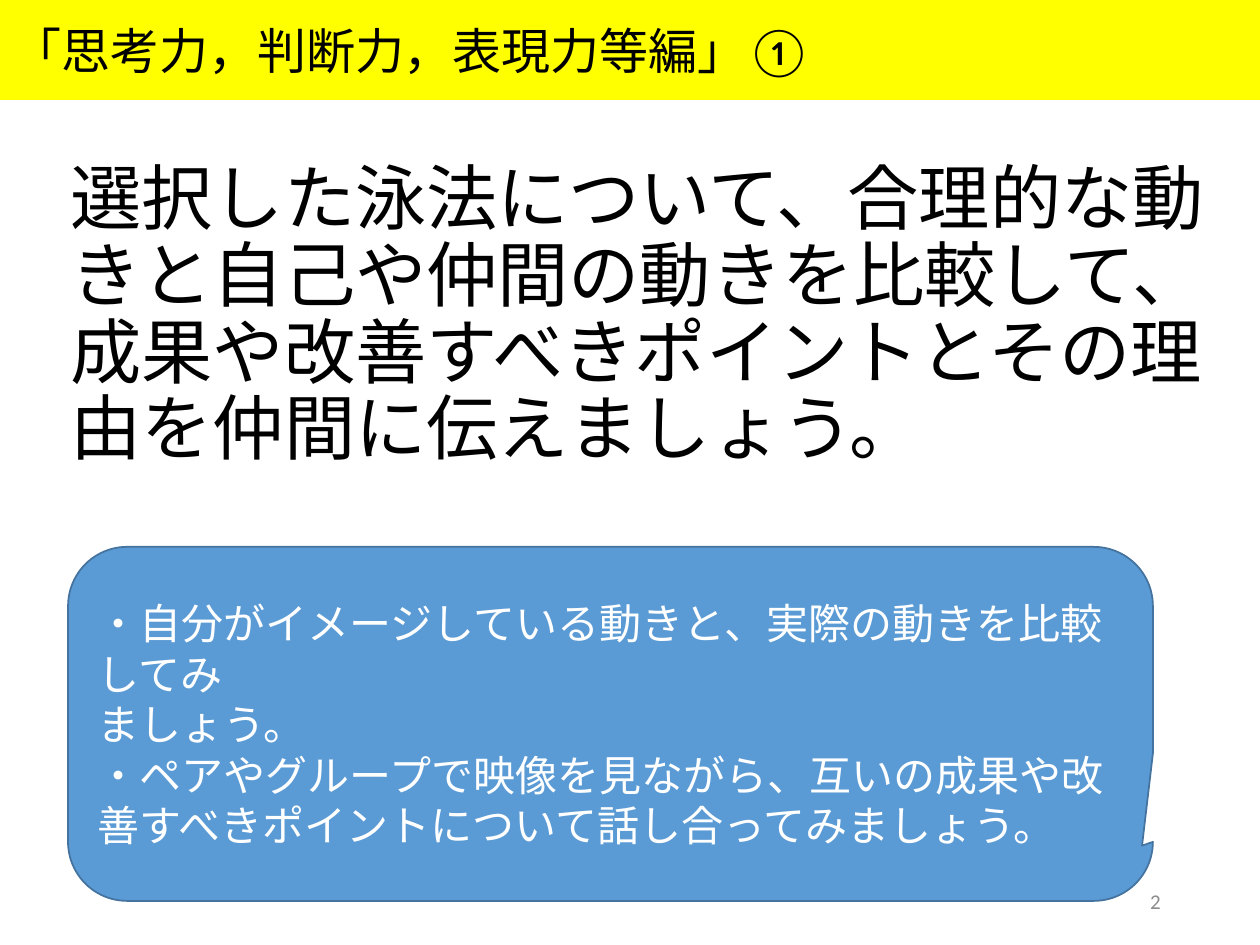
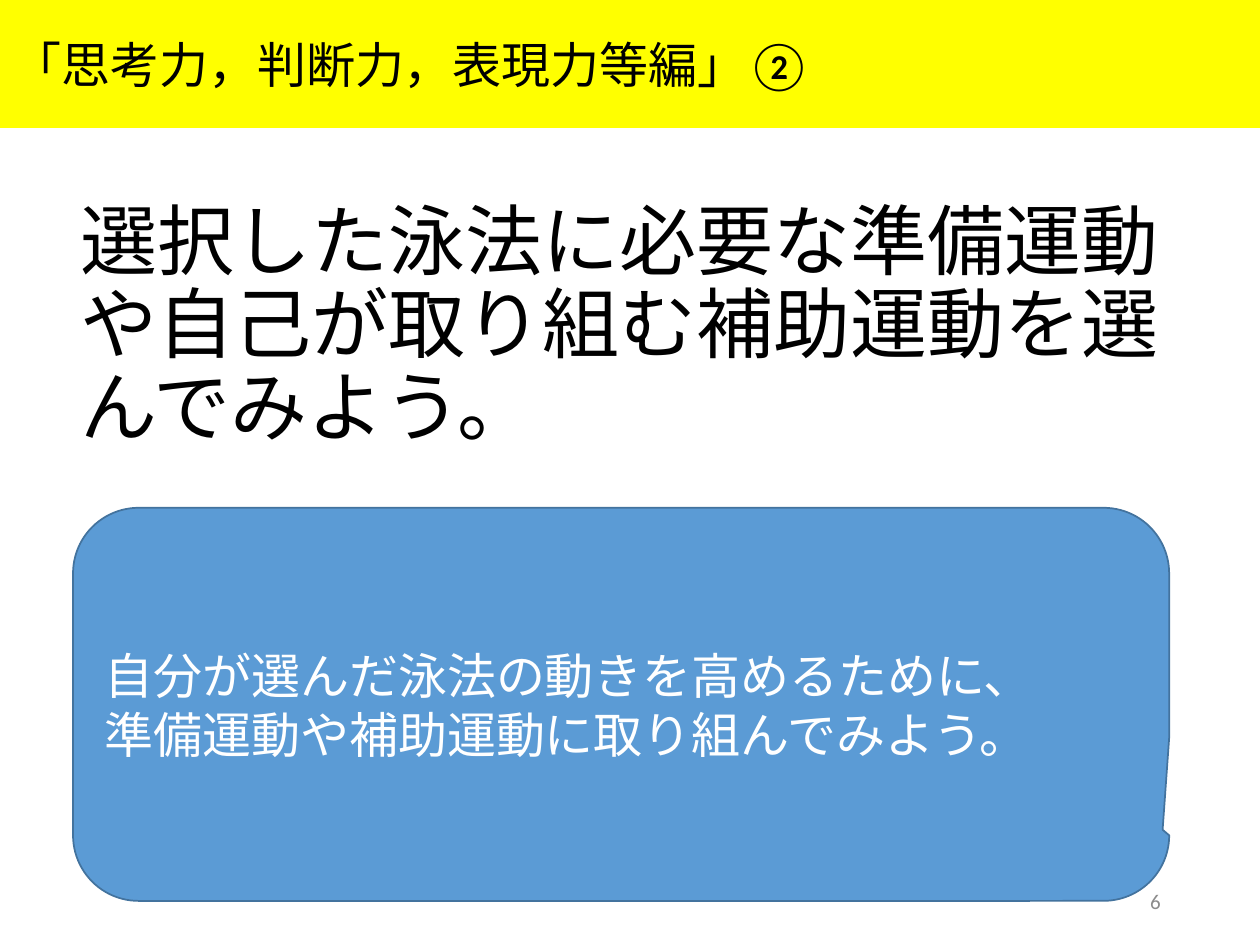
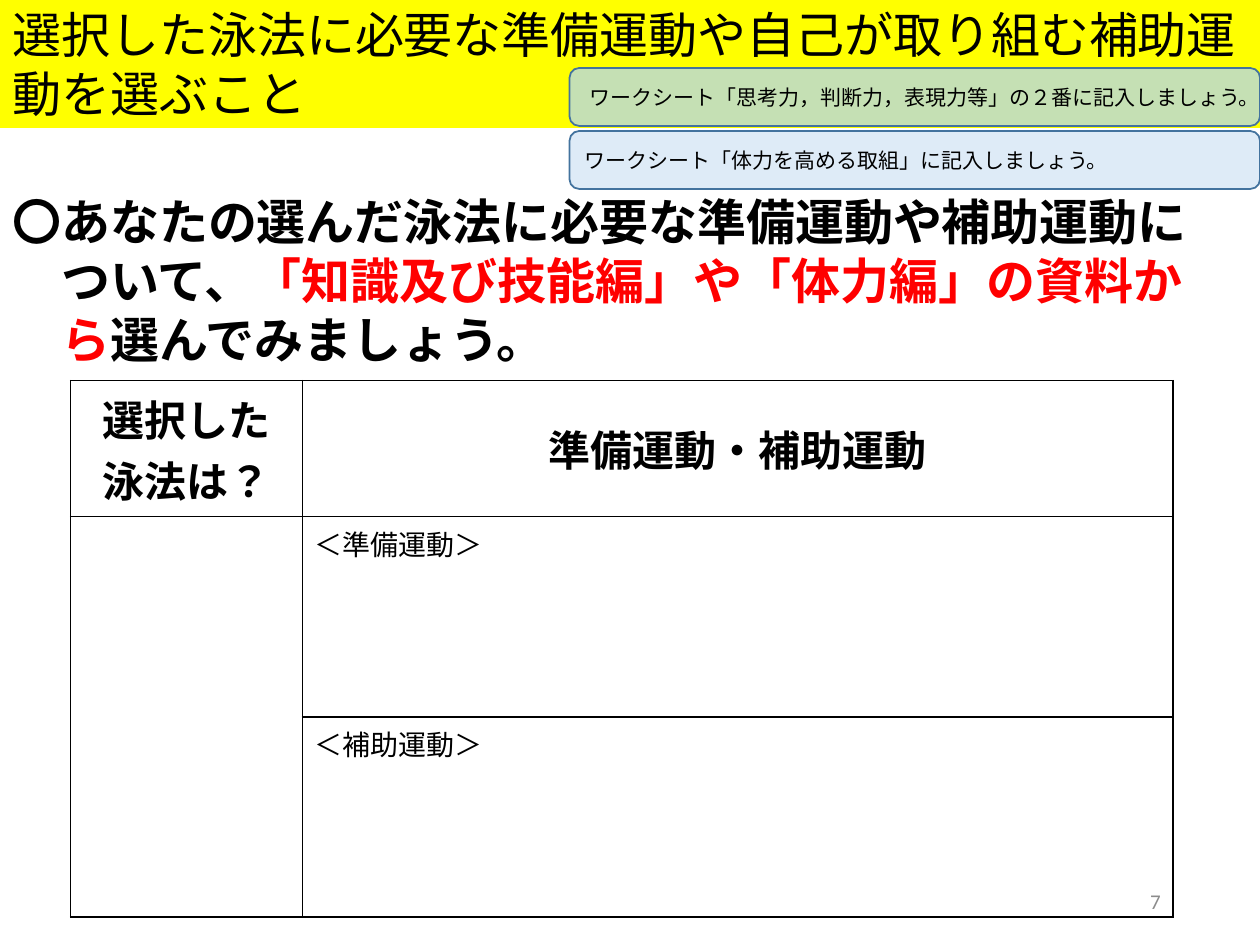
from lxml import etree
from pptx import Presentation
from pptx.dml.color import RGBColor
from pptx.enum.lang import MSO_LANGUAGE_ID as Language
from pptx.enum.shapes import MSO_SHAPE as Shape
from pptx.enum.text import MSO_ANCHOR as Anchor, MSO_AUTO_SIZE as AutoSize, PP_ALIGN as Align
from pptx.oxml.ns import qn
from pptx.util import Inches, Pt

YELLOW = RGBColor(0xFF, 0xFF, 0x00)
BLUE = RGBColor(0x5B, 0x9B, 0xD5)
OUTLINE = RGBColor(0x43, 0x73, 0x9E)
PALE_BLUE = RGBColor(0xDE, 0xEB, 0xF7)
PALE_GREEN = RGBColor(0xC5, 0xE0, 0xB4)
BLACK = RGBColor(0x00, 0x00, 0x00)
WHITE = RGBColor(0xFF, 0xFF, 0xFF)
RED = RGBColor(0xFF, 0x00, 0x00)
GRAY = RGBColor(0x8C, 0x8C, 0x8C)

LATIN_FONT = "Calibri"
JAPANESE_FONT = "Noto Sans CJK JP"

TITLE_SLIDE, TITLE_ONLY = 0, 5


def write(frame, paragraphs, size, color=BLACK, bold=False, align=Align.LEFT,
          anchor=Anchor.MIDDLE, font=LATIN_FONT, east_asian=LATIN_FONT):
    """Fill a text frame; each paragraph is a list of (text, color or None) runs."""
    frame.word_wrap = True
    frame.vertical_anchor = anchor
    for index, runs in enumerate(paragraphs):
        paragraph = frame.add_paragraph() if index else frame.paragraphs[0]
        paragraph.alignment = align
        paragraph.space_before = Pt(0)
        for text, run_color in runs:
            run = paragraph.add_run()
            run.text = text
            run.font.name = font
            run.font.size = Pt(size)
            run.font.bold = bold
            run.font.language_id = Language.JAPANESE
            run.font.color.rgb = run_color or color
            latin = run.font._element.find(qn("a:latin"))
            latin.addnext(latin.makeelement(qn("a:ea"), {"typeface": east_asian}))


def paint(shape, fill, line):
    shape.fill.solid()
    shape.fill.fore_color.rgb = fill
    shape.line.color.rgb = line
    shape.line.width = Pt(1)
    shape.shadow.inherit = False


presentation = Presentation()
presentation.slide_width = Inches(10)
presentation.slide_height = Inches(7.5)

# Shared parts: title band and slide number
pages = [
    (TITLE_SLIDE, "「思考力，判断力，表現力等編」①", 0.79, "2"),
    (TITLE_SLIDE, "「思考力，判断力，表現力等編」②", 1.01, "6"),
    (TITLE_ONLY, "選択した泳法に必要な準備運動や自己が取り組む補助運動を選ぶこと", 1.01, "7"),
]
slides = []
for layout, heading, band_height, number in pages:
    slide = presentation.slides.add_slide(presentation.slide_layouts[layout])
    slides.append(slide)
    title = slide.shapes.title
    title.left, title.top = 0, 0
    title.width, title.height = presentation.slide_width, Inches(band_height)
    paint(title, YELLOW, YELLOW)
    title.text_frame.auto_size = AutoSize.NONE
    write(title.text_frame, [[(heading, None)]], 28)
    number_box = slide.shapes.add_textbox(Inches(7.06), Inches(6.95), Inches(2.25), Inches(0.4))
    write(number_box.text_frame, [[(number, None)]], 12, GRAY, align=Align.RIGHT)

# Task statement and hint callout on the first two slides
tasks = [
    ("選択した泳法について、合理的な動きと自己や仲間の動きを比較して、"
     "成果や改善すべきポイントとその理由を仲間に伝えましょう。",
     40.7, (0.46, 1.24, 9.23, 2.99),
     ["・自分がイメージしている動きと、実際の動きを比較してみ",
      "ましょう。",
      "・ペアやグループで映像を見ながら、互いの成果や改善すべきポイントについて話し合ってみましょう。"],
     24, (0.54, 4.34, 8.61, 2.81), (0.49, 0.344, 0.167)),
    ("選択した泳法に必要な準備運動や自己が取り組む補助運動を選んでみよう。",
     44, (0.54, 1.56, 8.77, 2.99),
     ["自分が選んだ泳法の動きを高めるために、",
      "準備運動や補助運動に取り組んでみよう。"],
     28, (0.58, 4.03, 8.7, 3.12), (0.494, 0.319, 0.167)),
]
for slide, (task, task_size, task_box, hints, hint_size, hint_box, tail) in zip(slides, tasks):
    statement = slide.placeholders[1]
    statement.left, statement.top, statement.width, statement.height = map(Inches, task_box)
    statement.text_frame.auto_size = AutoSize.NONE
    write(statement.text_frame, [[(task, None)]], task_size, anchor=Anchor.TOP)
    statement.text_frame.paragraphs[0].line_spacing = 0.9

    callout = slide.shapes.add_shape(Shape.ROUNDED_RECTANGULAR_CALLOUT, *map(Inches, hint_box))
    for index, value in enumerate(tail):
        callout.adjustments[index] = value
    paint(callout, BLUE, OUTLINE)
    write(callout.text_frame, [[(hint, None)] for hint in hints], hint_size, WHITE,
          font=JAPANESE_FONT)

# Worksheet slide: table, instruction and two notes
worksheet = slides[2]
column_widths = (1.84, 6.91)
row_heights = (1.08, 1.59, 1.59)
table = worksheet.shapes.add_table(
    len(row_heights), len(column_widths), Inches(0.56), Inches(3.02),
    Inches(sum(column_widths)), Inches(sum(row_heights))).table
table.first_row = table.horz_banding = False
for column, width in zip(table.columns, column_widths):
    column.width = Inches(width)
for row, height in zip(table.rows, row_heights):
    row.height = Inches(height)
for cell in table.iter_cells():
    properties = cell._tc.get_or_add_tcPr()
    for side in ("lnL", "lnR", "lnT", "lnB"):
        border = etree.SubElement(properties, qn(f"a:{side}"), w=str(Pt(1)))
        solid = etree.SubElement(border, qn("a:solidFill"))
        etree.SubElement(solid, qn("a:srgbClr"), val=str(BLACK))
    cell.fill.background()
table.cell(1, 0).merge(table.cell(2, 0))
for column, heading in enumerate(("選択した泳法は？", "準備運動・補助運動")):
    cell = table.cell(0, column)
    write(cell.text_frame, [[(heading, None)]], 24, bold=True, align=Align.CENTER,
          east_asian=JAPANESE_FONT)
    cell.vertical_anchor = Anchor.MIDDLE
for row, label in enumerate(("＜準備運動＞", "＜補助運動＞"), start=1):
    cell = table.cell(row, 1)
    write(cell.text_frame, [[(label, None)]], 16, anchor=Anchor.TOP, east_asian=JAPANESE_FONT)
    cell.vertical_anchor = Anchor.TOP

instruction = worksheet.shapes.add_textbox(0, Inches(1.37), presentation.slide_width, Inches(1.7))
write(instruction.text_frame, [
    [("〇あなたの選んだ泳法に必要な準備運動や補助運動に", None)],
    [("　ついて、", None), ("「知識及び技能編」や「体力編」の資料か", RED)],
    [("　ら", RED), ("選んでみましょう。", None)],
], 28, bold=True)

notes = [
    ("ワークシート「体力を高める取組」に記入しましょう。", 1.04, PALE_BLUE, Align.LEFT),
    ("ワークシート「思考力，判断力，表現力等」の２番に記入しましょう。", 0.54, PALE_GREEN, Align.CENTER),
]
for text, top, fill, align in notes:
    note = worksheet.shapes.add_shape(
        Shape.ROUNDED_RECTANGLE, Inches(4.52), Inches(top), Inches(5.48), Inches(0.46))
    paint(note, fill, OUTLINE)
    write(note.text_frame, [[(text, None)]], 12, align=align)

presentation.save("out.pptx")
